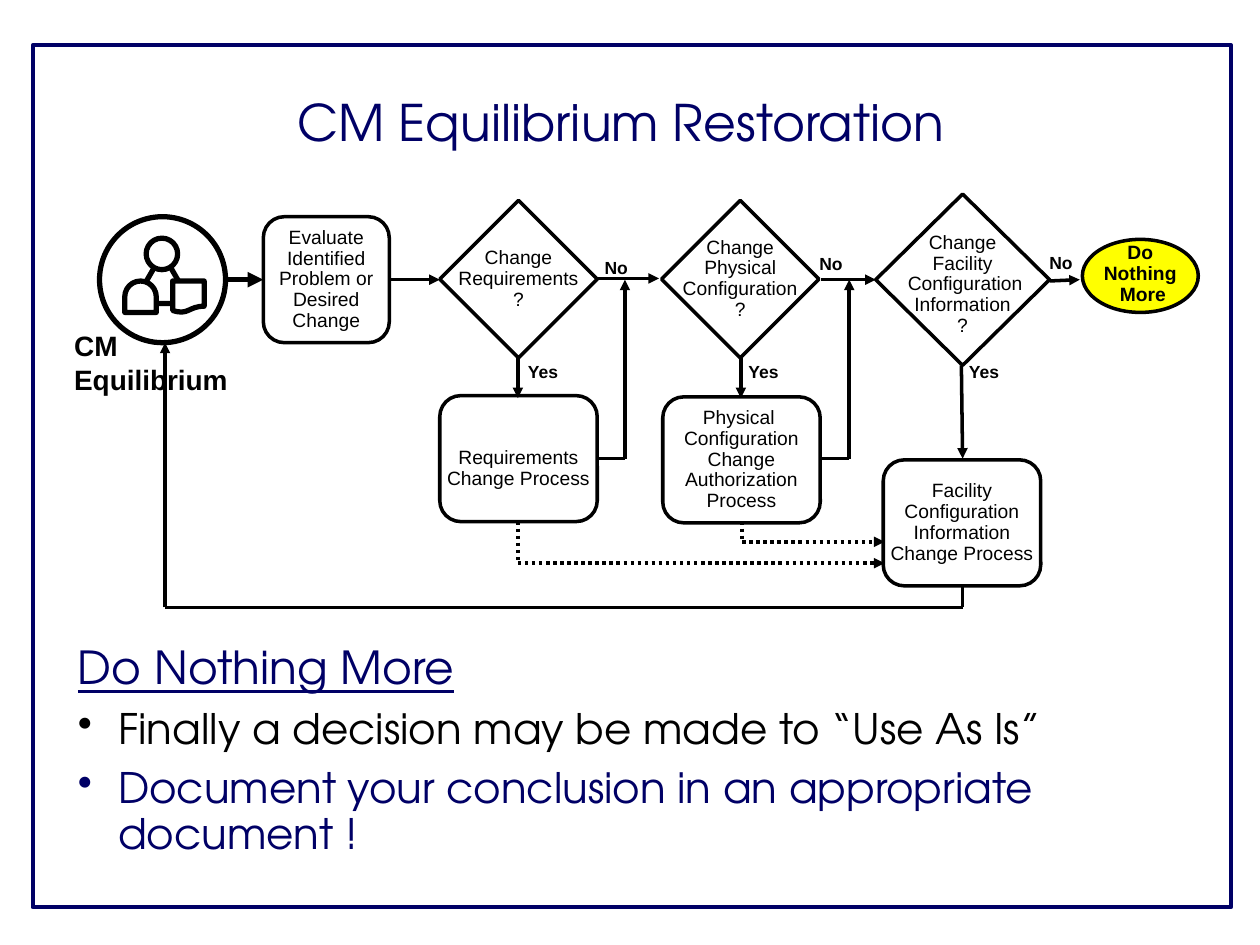
from dataclasses import dataclass

import pptx
import pptx.dml.color
import pptx.enum.dml
import pptx.enum.shapes
import pptx.enum.text
import pptx.oxml
import pptx.oxml.ns
import pptx.util

# The slide is a grid of 100 columns by 75 rows of square cells.
COLUMNS, ROWS = 100, 75
CELL = pptx.util.Inches(0.1)
BLACK, WHITE, NAVY, YELLOW = "000000", "FFFFFF", "000066", "FFFF00"
DISPLAY_FONT, DIAGRAM_FONT = "TeX Gyre Adventor", "Arial"
SHAPE = pptx.enum.shapes.MSO_SHAPE
ALIGN = pptx.enum.text.PP_ALIGN
ANCHOR = pptx.enum.text.MSO_ANCHOR


@dataclass
class Node:
    kind: int
    column: float
    row: float
    width: float
    height: float
    text: str = ""
    fill: str | None = WHITE
    line: str = BLACK
    weight: float = 2
    rotation: float = 0
    bold: bool = False
    top_inset: float = 0.5
    bottom_inset: float = 0.5


@dataclass
class Flow:
    """A run of straight segments through grid points."""
    points: list[tuple[float, float]]
    weight: float = 2
    dotted: bool = False
    arrow: bool = True


@dataclass
class Label:
    text: str
    column: float
    row: float
    width: float = 6


def cells(count: float) -> int:
    return round(count * CELL)


def colour(value: str) -> pptx.dml.color.RGBColor:
    return pptx.dml.color.RGBColor.from_string(value)


def write_text(frame, text, *, size=11, font=DIAGRAM_FONT, color=BLACK, bold=False,
               underline=False, align=ALIGN.CENTER, spacing=1.0, before=0,
               bullet=False, append=False):
    """Write each line of the text as a paragraph."""
    for number, line in enumerate(text.split("\n")):
        paragraph = frame.add_paragraph() if append or number else frame.paragraphs[0]
        paragraph.alignment = align
        paragraph.line_spacing = spacing
        paragraph.space_before = pptx.util.Pt(before)
        run = paragraph.add_run()
        run.text = line
        run.font.name = font
        run.font.size = pptx.util.Pt(size)
        run.font.bold = bold
        run.font.underline = underline
        run.font.color.rgb = colour(color)
        if bullet:
            properties = paragraph._p.get_or_add_pPr()
            properties.set("marL", str(cells(3.2)))
            properties.set("indent", str(-cells(3.2)))
            mark = pptx.oxml.parse_xml(
                f'<a:buChar {pptx.oxml.ns.nsdecls("a")} char="•"/>')
            properties.append(mark)


def add_text_box(slide, column: float, row: float, width: float, height: float):
    box = slide.shapes.add_textbox(*map(cells, (column, row, width, height)))
    box.text_frame.word_wrap = True
    return box.text_frame


def add_node(slide, node: Node) -> None:
    shape = slide.shapes.add_shape(
        node.kind, *map(cells, (node.column, node.row, node.width, node.height)))
    shape.shadow.inherit = False
    shape.rotation = node.rotation
    if node.fill:
        shape.fill.solid()
        shape.fill.fore_color.rgb = colour(node.fill)
    else:
        shape.fill.background()
    shape.line.color.rgb = colour(node.line)
    shape.line.width = pptx.util.Pt(node.weight)
    if node.text:
        frame = shape.text_frame
        frame.word_wrap = False
        frame.vertical_anchor = ANCHOR.MIDDLE
        frame.margin_top = cells(node.top_inset)
        frame.margin_bottom = cells(node.bottom_inset)
        write_text(frame, node.text, bold=node.bold, spacing=0.9)


def add_flow(slide, flow: Flow) -> None:
    for start, end in zip(flow.points, flow.points[1:]):
        connector = slide.shapes.add_connector(
            pptx.enum.shapes.MSO_CONNECTOR.STRAIGHT, *map(cells, start + end))
        connector.line.color.rgb = colour(BLACK)
        connector.line.width = pptx.util.Pt(flow.weight)
        if flow.dotted:
            connector.line.dash_style = pptx.enum.dml.MSO_LINE.ROUND_DOT
        namespace = pptx.oxml.ns.nsdecls("a")
        if flow.arrow and end == flow.points[-1]:
            connector.line._get_or_add_ln().append(
                pptx.oxml.parse_xml(f'<a:tailEnd {namespace} type="triangle"/>'))
        connector._element.spPr.append(
            pptx.oxml.parse_xml(f"<a:effectLst {namespace}/>"))


NODES = [
    Node(SHAPE.OVAL, 7.9, 17.2, 10, 10, weight=3),
    Node(SHAPE.ISOSCELES_TRIANGLE, 10.6, 20.1, 4.6, 4, fill=None, weight=3),
    Node(SHAPE.OVAL, 11.6, 18.9, 2.5, 2.5, weight=3),
    Node(SHAPE.FLOWCHART_DOCUMENT, 13.7, 22.3, 2.5, 2.5, weight=3),
    Node(SHAPE.FLOWCHART_DELAY, 9.9, 22.3, 2.5, 2.5, weight=3, rotation=270),
    Node(SHAPE.ROUNDED_RECTANGLE, 20.9, 17.2, 10, 10,
         "Evaluate\nIdentified\nProblem or\nDesired\nChange"),
    Node(SHAPE.DIAMOND, 34.9, 15.9, 12.5, 12.5, "Change\nRequirements\n?"),
    Node(SHAPE.DIAMOND, 52.5, 15.9, 12.5, 12.5, "Change\nPhysical\nConfiguration\n?"),
    Node(SHAPE.DIAMOND, 69.5, 15.4, 13.8, 13.6,
         "Change\nFacility\n Configuration\nInformation\n?",
         top_inset=0.8, bottom_inset=0),
    Node(SHAPE.OVAL, 85.9, 19, 9.2, 5.8, "Do\nNothing\n More", fill=YELLOW,
         bold=True, top_inset=0.2),
    Node(SHAPE.ROUNDED_RECTANGLE, 34.9, 31.4, 12.5, 10,
         "Requirements\nChange Process", top_inset=2.1),
    Node(SHAPE.ROUNDED_RECTANGLE, 52.6, 31.5, 12.5, 10,
         "Physical \nConfiguration\nChange\nAuthorization\nProcess"),
    Node(SHAPE.ROUNDED_RECTANGLE, 70.1, 36.5, 12.5, 10,
         "Facility\nConfiguration\nInformation\nChange Process"),
]

FLOWS = [
    Flow([(17.9, 22.2), (20.9, 22.2)], weight=3),
    Flow([(30.9, 22.2), (34.9, 22.2)]),
    Flow([(47.3, 22.1), (52.3, 22.1)]),
    Flow([(65.2, 22.2), (69.5, 22.2)]),
    Flow([(83.3, 22.3), (85.7, 22.2)]),
    Flow([(41.1, 28.2), (41.1, 31.6)]),
    Flow([(58.8, 28.3), (58.8, 31.6)]),
    Flow([(76.3, 29), (76.4, 36.4)]),
    Flow([(47.3, 36.4), (49.6, 36.4), (49.6, 22.2)]),
    Flow([(65, 36.4), (67.4, 36.4), (67.4, 22.2)]),
    Flow([(41.1, 41.4), (41.1, 44.7), (70.2, 44.7)], dotted=True),
    Flow([(58.9, 41.4), (58.9, 43), (70.2, 43)], dotted=True),
    Flow([(76.4, 46.4), (76.4, 48.2), (13.1, 48.2), (13.1, 27.2)]),
]

LABELS = [
    Label("No", 45.9, 19.9), Label("No", 63.6, 19.6, 4.7), Label("No", 81.8, 19.5, 4.8),
    *(Label("Yes", column, 28.2) for column in (40.1, 57.6, 75.1)),
]


def add_title(slide) -> None:
    title = slide.shapes.title
    title.left, title.top, title.width, title.height = map(cells, (22.6, 6.7, 63.3, 5.8))
    frame = title.text_frame
    frame.auto_size = pptx.enum.text.MSO_AUTO_SIZE.NONE
    frame.vertical_anchor = ANCHOR.BOTTOM
    write_text(frame, "CM Equilibrium Restoration", size=28.8, font=DISPLAY_FONT,
               color=NAVY, align=ALIGN.LEFT)


def add_conclusion(slide) -> None:
    frame = add_text_box(slide, 5.2, 50.7, 84, 18.5)
    style = dict(font=DISPLAY_FONT, align=ALIGN.LEFT, spacing=0.9)
    write_text(frame, "Do Nothing More", size=26, color=NAVY, underline=True, **style)
    bullets = [("Finally a decision may be made to “Use As Is”", BLACK),
               ("Document your conclusion in an appropriate document !", NAVY)]
    for text, color in bullets:
        write_text(frame, text, size=24, color=color, before=8, bullet=True,
                   append=True, **style)


def main() -> None:
    presentation = pptx.Presentation()
    presentation.slide_width = cells(COLUMNS)
    presentation.slide_height = cells(ROWS)
    slide = presentation.slides.add_slide(presentation.slide_layouts[5])
    add_title(slide)
    add_conclusion(slide)
    for node in NODES:
        add_node(slide, node)
    write_text(add_text_box(slide, 4.9, 25.6, 14.5, 6.4), "CM Equilibrium", size=16,
               bold=True, align=ALIGN.LEFT)
    for flow in FLOWS:
        add_flow(slide, flow)
    for label in LABELS:
        write_text(add_text_box(slide, label.column, label.row, label.width, 2.7),
                   label.text, size=10, bold=True)
    add_node(slide, Node(SHAPE.RECTANGLE, 2.6, 3.6, 95.1, 68.4, fill=None,
                         line=NAVY, weight=2.5))
    presentation.save("out.pptx")


if __name__ == "__main__":
    main()
